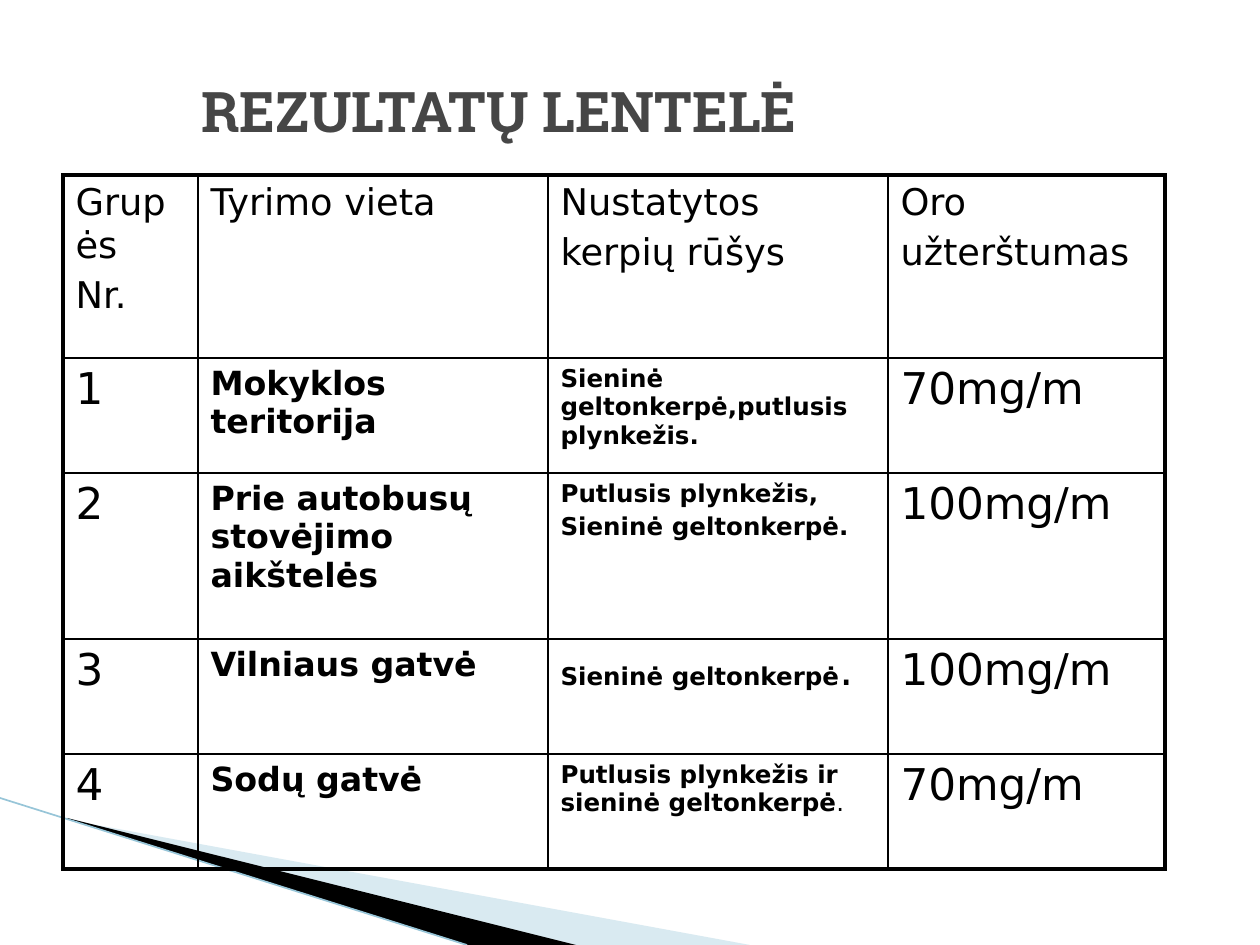
from dataclasses import dataclass
from typing import NamedTuple

from lxml.etree import SubElement
from pptx import Presentation
from pptx.dml.color import RGBColor
from pptx.enum.shapes import MSO_CONNECTOR
from pptx.enum.text import MSO_ANCHOR
from pptx.oxml.ns import qn
from pptx.util import Emu, Pt

PX = 914400 / 126


def px(length: int) -> Emu:
    return Emu(round(length * PX))


@dataclass(frozen=True)
class Theme:
    title_font: str = "Roboto Slab"
    body_font: str = "DejaVu Sans"
    title_color: str = "464646"
    ink: str = "000000"
    band: str = "A0CBDC"
    band_opacity: int = 40
    edge: str = "97C5D8"
    title_size: int = 32
    header_size: int = 21
    value_size: int = 25
    place_size: int = 19
    species_size: int = 14
    edge_width: float = 0.95
    outer_border: float = 2.25
    inner_border: float = 1
    space_before: float = 0.2  # share of the type size


THEME = Theme()


class Span(NamedTuple):
    text: str
    size: int
    bold: bool = False
    font: str = THEME.body_font
    color: str = THEME.ink


class Wedge(NamedTuple):
    points: list[tuple[int, int]]
    color: str
    opacity: int = 100


Cell = list[list[Span]]  # paragraphs of spans


def header(*lines: str) -> Cell:
    return [[Span(line, THEME.header_size)] for line in lines]


def value(text: str) -> Cell:
    return [[Span(text, THEME.value_size)]]


def place(text: str) -> Cell:
    return [[Span(text, THEME.place_size, True)]]


def species(*lines: str) -> Cell:
    return [[Span(line, THEME.species_size, True)] for line in lines]


def species_with_stop(text: str, stop_size: int) -> Cell:
    return [[Span(text, THEME.species_size, True), Span(".", stop_size)]]


WEDGES = [
    Wedge([(69, 820), (750, 945), (575, 945), (69, 819)], THEME.band, THEME.band_opacity),
    Wedge([(67, 818), (576, 945), (468, 945), (68, 819)], THEME.ink),
]
COLUMNS = [135, 350, 340, 277]
ROWS = [183, 115, 166, 115, 115]
RESULTS: list[list[Cell]] = [
    [header("Grupės", "Nr."), header("Tyrimo vieta"),
     header("Nustatytos", "kerpių rūšys"), header("Oro", "užterštumas")],
    [value("1"), place("Mokyklos teritorija"),
     species("Sieninė geltonkerpė,putlusis plynkežis."), value("70mg/m")],
    [value("2"), place("Prie autobusų stovėjimo aikštelės"),
     species("Putlusis plynkežis,", "Sieninė geltonkerpė."), value("100mg/m")],
    [value("3"), place("Vilniaus gatvė"),
     species_with_stop("Sieninė geltonkerpė", THEME.value_size), value("100mg/m")],
    [value("4"), place("Sodų gatvė"),
     species_with_stop("Putlusis plynkežis ir sieninė geltonkerpė", THEME.species_size),
     value("70mg/m")],
]


def write(frame, paragraphs: Cell) -> None:
    frame.word_wrap = True
    for index, spans in enumerate(paragraphs):
        para = frame.add_paragraph() if index else frame.paragraphs[0]
        if index:
            para.space_before = Pt(round(spans[0].size * THEME.space_before, 1))
        for span in spans:
            run = para.add_run()
            run.text = span.text
            run.font.name = span.font
            run.font.size = Pt(span.size)
            run.font.bold = span.bold
            run.font.color.rgb = RGBColor.from_string(span.color)


def draw_wedge(page, wedge: Wedge) -> None:
    builder = page.shapes.build_freeform(*wedge.points[0], scale=PX)
    builder.add_line_segments(wedge.points[1:], close=True)
    shape = builder.convert_to_shape()
    shape.shadow.inherit = False
    shape.line.fill.background()
    shape.fill.solid()
    shape.fill.fore_color.rgb = RGBColor.from_string(wedge.color)
    if wedge.opacity < 100:
        color = shape.fill._xPr.find(qn("a:solidFill"))[0]
        SubElement(color, qn("a:alpha"), val=str(wedge.opacity * 1000))


def draw_edge(page, start: tuple[int, int], end: tuple[int, int]) -> None:
    line = page.shapes.add_connector(
        MSO_CONNECTOR.STRAIGHT, *(px(length) for length in start + end))
    line.line.color.rgb = RGBColor.from_string(THEME.edge)
    line.line.width = Pt(THEME.edge_width)
    SubElement(line._element.spPr, qn("a:effectLst"))


def set_borders(cell, widths: dict[str, float]) -> None:
    properties = cell._tc.get_or_add_tcPr()
    for index, (side, width) in enumerate(widths.items()):
        border = properties.makeelement(qn(f"a:{side}"), {"w": str(Pt(width))})
        fill = SubElement(border, qn("a:solidFill"))
        SubElement(fill, qn("a:srgbClr"), val=THEME.ink)
        properties.insert(index, border)  # borders come before the cell fill


def draw_table(page, left: int, top: int) -> None:
    table = page.shapes.add_table(
        len(ROWS), len(COLUMNS), px(left), px(top), px(sum(COLUMNS)), px(sum(ROWS))).table
    table.first_row = table.horz_banding = False
    for column, width in zip(table.columns, COLUMNS):
        column.width = px(width)
    for row, height in zip(table.rows, ROWS):
        row.height = px(height)
    for r, contents in enumerate(RESULTS):
        for c, content in enumerate(contents):
            cell = table.cell(r, c)
            cell.fill.background()
            outer = {"lnL": c == 0, "lnR": c == len(COLUMNS) - 1,
                     "lnT": r == 0, "lnB": r == len(ROWS) - 1}
            set_borders(cell, {side: THEME.outer_border if is_outer else THEME.inner_border
                               for side, is_outer in outer.items()})
            write(cell.text_frame, content)


def main() -> None:
    deck = Presentation()
    deck.slide_width, deck.slide_height = px(1260), px(945)
    page = deck.slides.add_slide(deck.slide_layouts[6])

    # Corner decoration
    for wedge in WEDGES:
        draw_wedge(page, wedge)
    draw_edge(page, (0, 798), (467, 945))

    # Title
    box = page.shapes.add_textbox(px(189), px(42), px(1008), px(137))
    box.text_frame.vertical_anchor = MSO_ANCHOR.MIDDLE
    write(box.text_frame, [[Span("REZULTATŲ LENTELĖ", THEME.title_size, True,
                                 THEME.title_font, THEME.title_color)]])

    # Results
    draw_table(page, 63, 175)

    deck.save("out.pptx")


if __name__ == "__main__":
    main()
